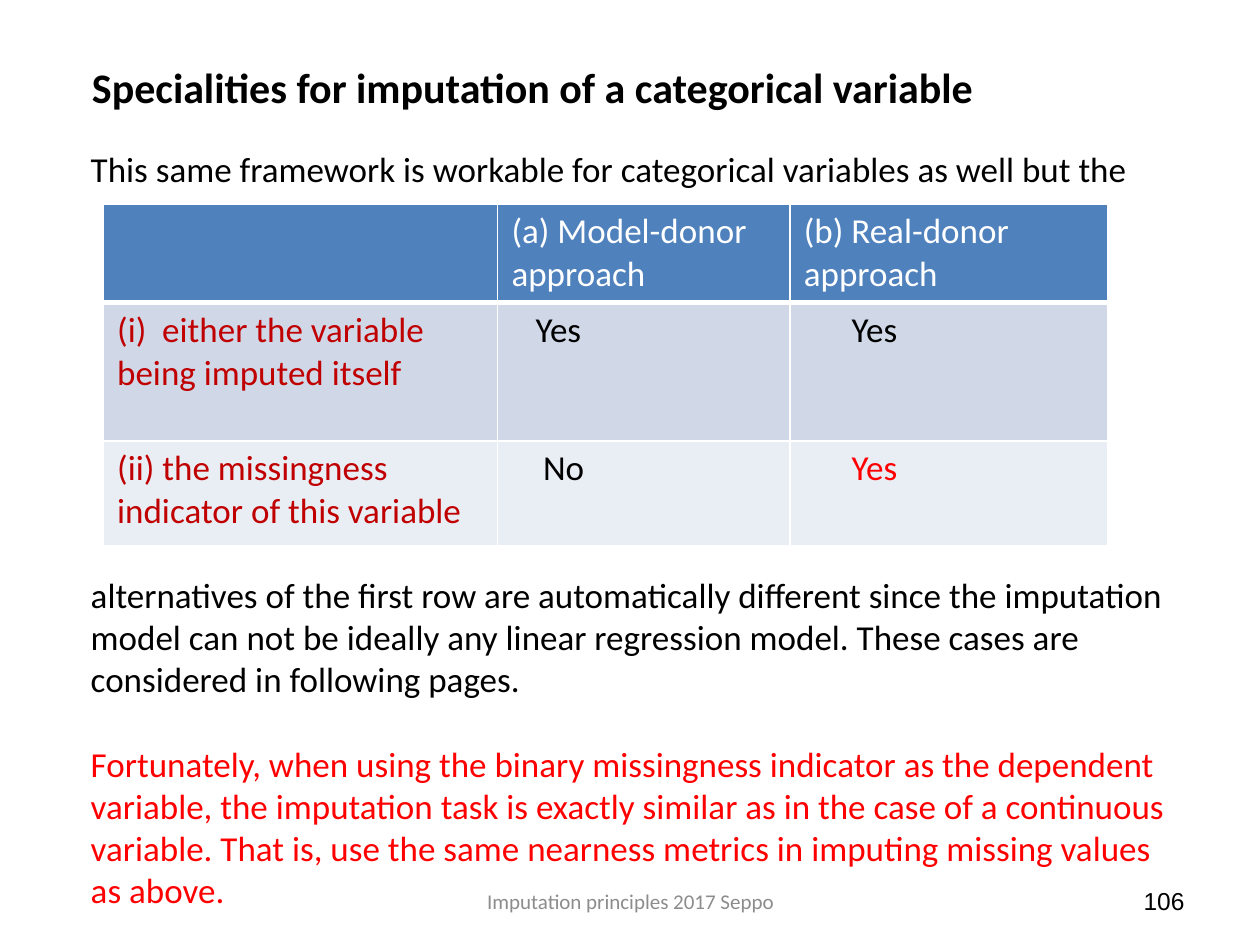
from dataclasses import dataclass

from lxml.etree import SubElement
from pptx import Presentation
from pptx.dml.color import RGBColor
from pptx.enum.text import MSO_ANCHOR, MSO_AUTO_SIZE, PP_ALIGN
from pptx.oxml.ns import qn
from pptx.util import Inches, Pt


@dataclass(frozen=True)
class Theme:
    font: str = "Calibri"
    number_font: str = "Arial"
    black: str = "000000"
    white: str = "FFFFFF"
    red: str = "FF0000"
    dark_red: str = "C00000"
    grey: str = "8C8C8C"
    header_fill: str = "4F81BD"
    row_fills: tuple = ("D0D8E8", "E9EDF4")
    title_size: int = 24
    body_size: int = 20
    number_size: int = 14
    footer_size: int = 12
    line_height: float = 24.4


THEME = Theme()

INTRO = "This same framework is workable for categorical variables as well but the"
ALTERNATIVES = (
    "alternatives of the first row are automatically different since the imputation "
    "model can not be ideally any linear regression model. These cases are "
    "considered in following pages."
)
CONCLUSION = (
    "Fortunately, when using the binary missingness indicator as the dependent "
    "variable, the imputation task is exactly similar as in the case of a continuous "
    "variable. That is, use the same nearness metrics in imputing missing values "
    "as above."
)
BODY = [
    (INTRO, THEME.black, 0),
    (ALTERNATIVES, THEME.black, 9),
    (CONCLUSION, THEME.red, 1),
]

COLUMN_WIDTHS = (3.13, 2.32, 2.52)
ROW_HEIGHTS = (0.77, 1.1, 0.83)
CELLS = [
    [
        ("", THEME.white, 0),
        ("(a) Model-donor approach", THEME.white, 0),
        ("(b) Real-donor approach", THEME.white, 0),
    ],
    [
        ("(i)  either the variable being imputed itself", THEME.dark_red, 0),
        ("Yes", THEME.black, 0.19),
        ("Yes", THEME.black, 0.38),
    ],
    [
        ("(ii) the missingness indicator of this variable", THEME.dark_red, 0),
        ("No", THEME.black, 0.25),
        ("Yes", THEME.red, 0.38),
    ],
]


def place(shape, box):
    shape.left, shape.top, shape.width, shape.height = map(Inches, box)


def format_runs(para, size, color, font=THEME.font, bold=False):
    for span in para.runs:
        span.font.name = font
        span.font.size = Pt(size)
        span.font.bold = bold
        span.font.color.rgb = RGBColor.from_string(color)


def add_title(page, box):
    title = page.shapes.title
    place(title, box)
    frame = title.text_frame
    frame.text = "Specialities for imputation of a categorical variable"
    frame.word_wrap = False
    frame.auto_size = MSO_AUTO_SIZE.NONE
    frame.vertical_anchor = MSO_ANCHOR.TOP
    para = frame.paragraphs[0]
    para.alignment = PP_ALIGN.LEFT
    format_runs(para, THEME.title_size, THEME.black, bold=True)


def add_body(page, box):
    body = page.placeholders[1]
    place(body, box)
    frame = body.text_frame
    frame.text = "\n".join(text for text, _, _ in BODY)
    frame.auto_size = MSO_AUTO_SIZE.NONE
    for para, (_, color, gap_lines) in zip(frame.paragraphs, BODY):
        para.space_before = Pt(gap_lines * THEME.line_height)
        properties = para._p.get_or_add_pPr()
        properties.set("marL", "0")
        properties.set("indent", "0")
        SubElement(properties, qn("a:buNone"))
        format_runs(para, THEME.body_size, color)


def set_borders(cell, widths):
    properties = cell._tc.get_or_add_tcPr()
    for position, (side, width) in enumerate(widths.items()):
        line = SubElement(properties, qn(f"a:ln{side}"), w=str(Pt(width)))
        fill = SubElement(line, qn("a:solidFill"))
        SubElement(fill, qn("a:srgbClr"), val=THEME.white)
        properties.insert(position, line)


def add_comparison_table(page, box):
    frame = page.shapes.add_table(len(CELLS), len(COLUMN_WIDTHS), *map(Inches, box))
    table = frame.table
    for column, width in zip(table.columns, COLUMN_WIDTHS):
        column.width = Inches(width)
    for row, height in zip(table.rows, ROW_HEIGHTS):
        row.height = Inches(height)
    fills = (THEME.header_fill, *THEME.row_fills)
    for row_index, row in enumerate(CELLS):
        for column_index, (text, color, indent) in enumerate(row):
            cell = table.cell(row_index, column_index)
            cell.text = text
            cell.margin_left = Inches(0.11 + indent)
            cell.margin_right = Inches(0.11)
            cell.margin_top = cell.margin_bottom = Inches(0.05)
            cell.fill.solid()
            cell.fill.fore_color.rgb = RGBColor.from_string(fills[row_index])
            top = 3 if row_index == 1 else 1
            bottom = 3 if row_index == 0 else 1
            set_borders(cell, {"L": 1, "R": 1, "T": top, "B": bottom})
            format_runs(cell.text_frame.paragraphs[0], THEME.body_size, color)


def add_footer_text(page, box, text, alignment, size, color, font):
    frame = page.shapes.add_textbox(*map(Inches, box)).text_frame
    frame.text = text
    frame.word_wrap = True
    frame.vertical_anchor = MSO_ANCHOR.MIDDLE
    para = frame.paragraphs[0]
    para.alignment = alignment
    format_runs(para, size, color, font)


def build_page(deck):
    page = deck.slides.add_slide(deck.slide_layouts[1])
    add_body(page, (0.62, 1.12, 8.77, 6.16))
    add_title(page, (0.63, 0.44, 7.2, 0.5))
    add_comparison_table(page, (0.82, 1.62, sum(COLUMN_WIDTHS), sum(ROW_HEIGHTS)))
    add_footer_text(page, (3.42, 6.95, 3.17, 0.4), "Imputation principles 2017 Seppo",
                    PP_ALIGN.CENTER, THEME.footer_size, THEME.grey, THEME.font)
    add_footer_text(page, (7.17, 6.95, 2.33, 0.4), "106",
                    PP_ALIGN.RIGHT, THEME.number_size, THEME.black, THEME.number_font)


def main():
    deck = Presentation()
    deck.slide_width = Inches(10)
    deck.slide_height = Inches(7.5)
    build_page(deck)
    deck.save("out.pptx")


if __name__ == "__main__":
    main()
